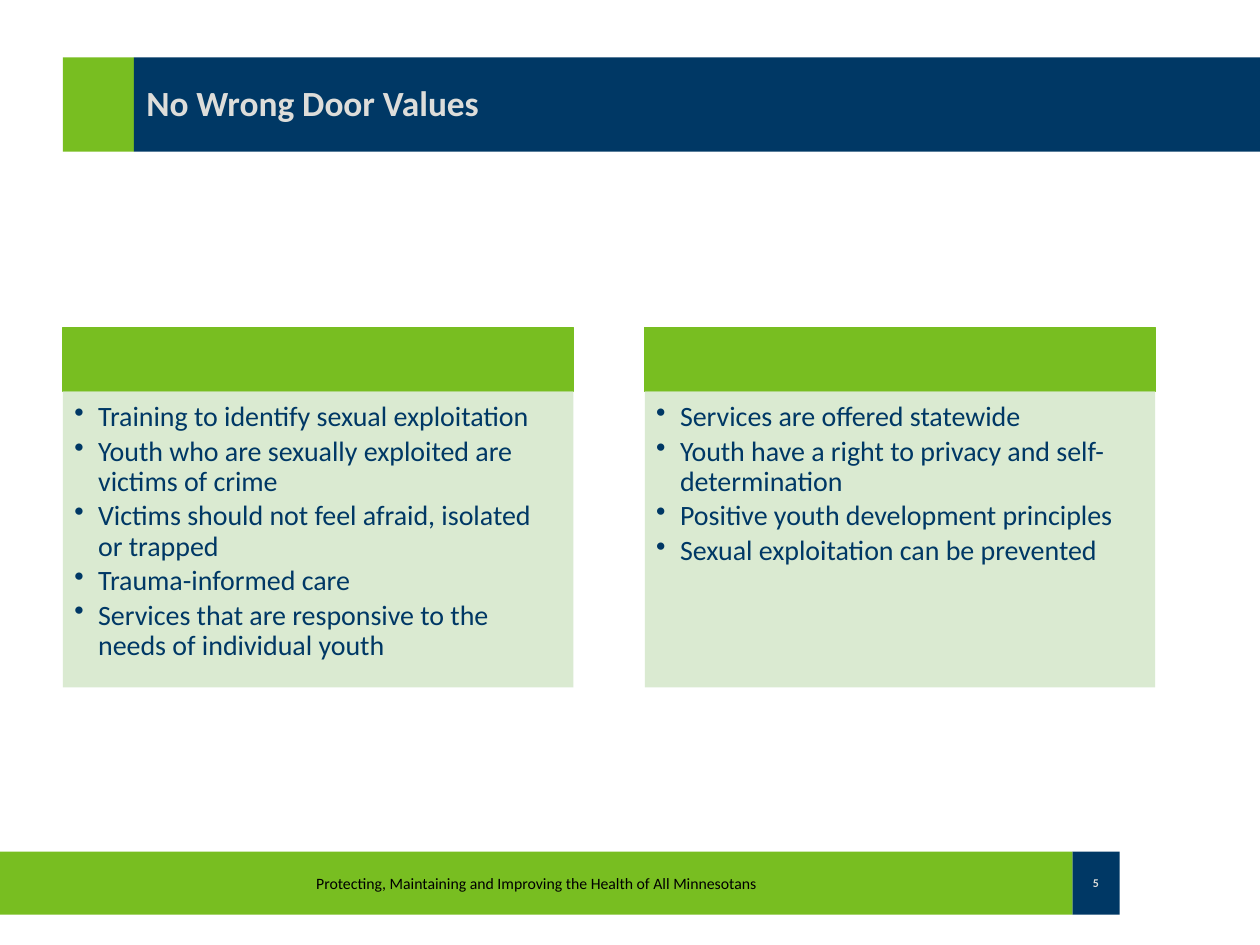
from dataclasses import dataclass

from lxml import etree
from pptx import Presentation, util as u
from pptx.dml.color import RGBColor
from pptx.enum import shapes, text
from pptx.oxml import ns


@dataclass(frozen=True)
class Theme:
    """Colours and type sizes of the slide."""
    green: str = "78BE21"
    navy: str = "003865"
    pale: str = "D6E8CD"
    light: str = "DDDDDA"
    black: str = "000000"
    font: str = "Calibri"
    title: float = 20.2
    body: float = 16
    foot: float = 9
    page: float = 6.8


T = Theme()
LEFT = (
    "Training to identify sexual exploitation",
    "Youth who are sexually exploited are victims of crime",
    "Victims should not feel afraid, isolated or trapped",
    "Trauma-informed care",
    "Services that are responsive to the needs of individual youth",
)
RIGHT = (
    "Services are offered statewide",
    "Youth have a right to privacy and self-determination",
    "Positive youth development principles",
    "Sexual exploitation can be prevented",
)


def add_rect(slide, box, fill, line=None):
    """Add a flat rectangle; box is left, top, width, height in cm."""
    rect = slide.shapes.add_shape(shapes.MSO_SHAPE.RECTANGLE, *map(u.Cm, box))
    rect.shadow.inherit = False
    rect.fill.solid()
    rect.fill.fore_color.rgb = RGBColor.from_string(fill)
    if line:
        rect.line.color.rgb = RGBColor.from_string(line)
        rect.line.width = u.Pt(0.75)
    else:
        rect.line.fill.background()
    return rect


def set_font(para, size, color, bold=False):
    """Style a whole paragraph."""
    font = para.font
    font.name, font.size, font.bold = T.font, u.Pt(size), bold
    font.color.rgb = RGBColor.from_string(color)


def add_label(rect, words, size, color, bold=False, align=text.PP_ALIGN.CENTER):
    """Write one vertically centred line in a rectangle."""
    frame = rect.text_frame
    frame.word_wrap = True
    frame.vertical_anchor = text.MSO_ANCHOR.MIDDLE
    para = frame.paragraphs[0]
    para.text, para.alignment = words, align
    set_font(para, size, color, bold)


def set_bullet(para):
    """Give a paragraph a hanging round bullet."""
    props = para._p.get_or_add_pPr()
    hang = u.Cm(0.48)
    props.set("marL", str(hang))
    props.set("indent", str(-hang))
    mark = etree.Element(ns.qn("a:buChar"), char="•")
    props.insert_element_before(mark, "a:tabLst", "a:defRPr", "a:extLst")


def add_list(rect, items):
    """Fill a rectangle with bulleted items from the top."""
    frame = rect.text_frame
    frame.word_wrap = True
    frame.vertical_anchor = text.MSO_ANCHOR.TOP
    frame.margin_left = frame.margin_top = u.Cm(0.23)
    frame.margin_right, frame.margin_bottom = u.Cm(0.3), u.Cm(0.36)
    for i, item in enumerate(items):
        para = frame.add_paragraph() if i else frame.paragraphs[0]
        para.text, para.level = item, 1
        para.alignment = text.PP_ALIGN.LEFT
        para.line_spacing = 0.9
        para.space_after = u.Pt(0.15 * T.body)
        set_font(para, T.body, T.navy)
        set_bullet(para)


def add_panel(slide, left, items):
    """Add a column with a green head and a pale list below."""
    add_rect(slide, (left, 6.61, 10.29, 1.28), T.green, T.green)
    body = add_rect(slide, (left, 7.89, 10.29, 5.97), T.pale)
    tint = body.fill._xPr.find(".//" + ns.qn("a:srgbClr"))
    etree.SubElement(tint, ns.qn("a:alpha"), val="90000")
    add_list(body, items)


def main():
    """Build and save the slide."""
    deck = Presentation()
    deck.slide_width, deck.slide_height = u.Cm(25.4), u.Cm(19.05)
    slide = deck.slides.add_slide(deck.slide_layouts[6])

    add_rect(slide, (1.27, 1.16, 1.43, 1.9), T.green)
    page = add_rect(slide, (21.62, 17.17, 0.95, 1.27), T.navy)
    page.text_frame.margin_left = page.text_frame.margin_right = 0
    add_label(page, "5", T.page, T.light, True)
    foot = add_rect(slide, (0, 17.17, 21.62, 1.27), T.green)
    add_label(foot, "Protecting, Maintaining and Improving the Health of All Minnesotans",
              T.foot, T.black)

    for i, items in enumerate((LEFT, RIGHT)):
        add_panel(slide, 1.27 + i * 11.73, items)

    title = add_rect(slide, (2.7, 1.16, 22.7, 1.9), T.navy)
    add_label(title, "No Wrong Door Values", T.title, T.light, True, text.PP_ALIGN.LEFT)
    title.text_frame.paragraphs[0].line_spacing = 0.9
    deck.save("out.pptx")


if __name__ == "__main__":
    main()
